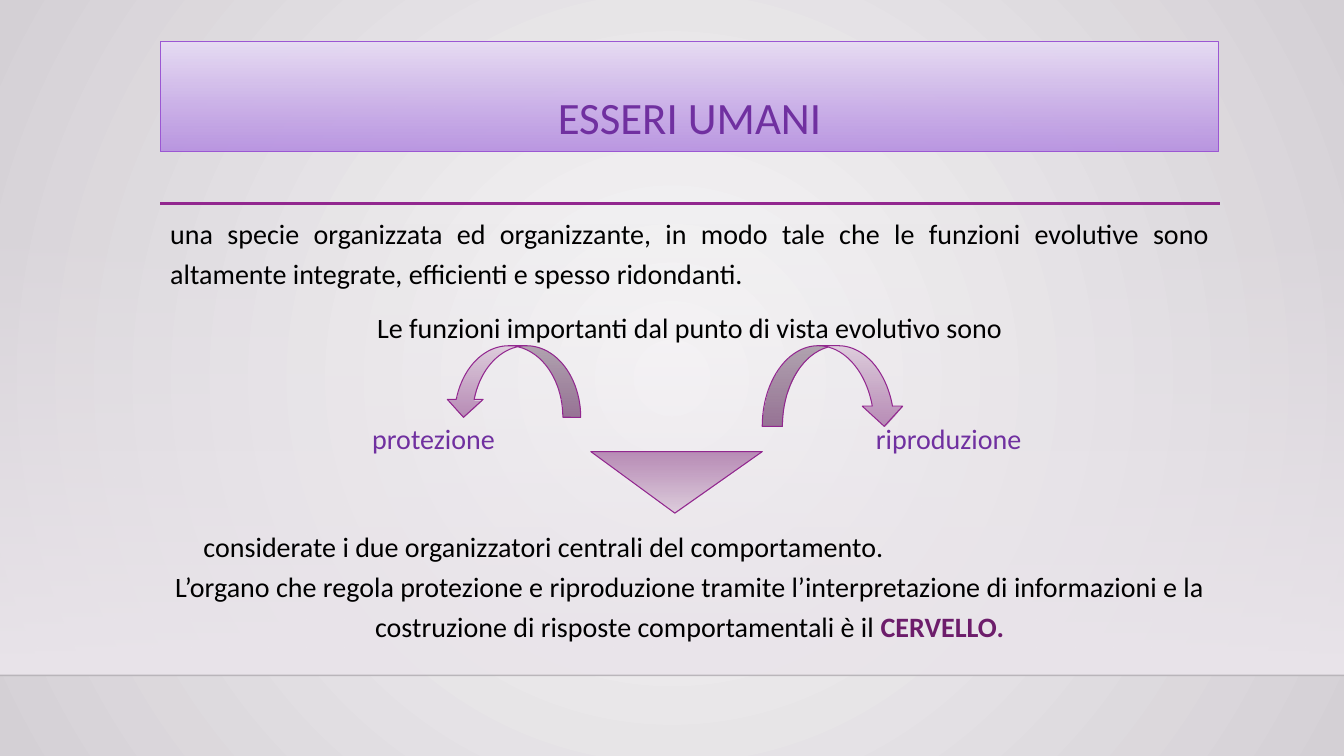
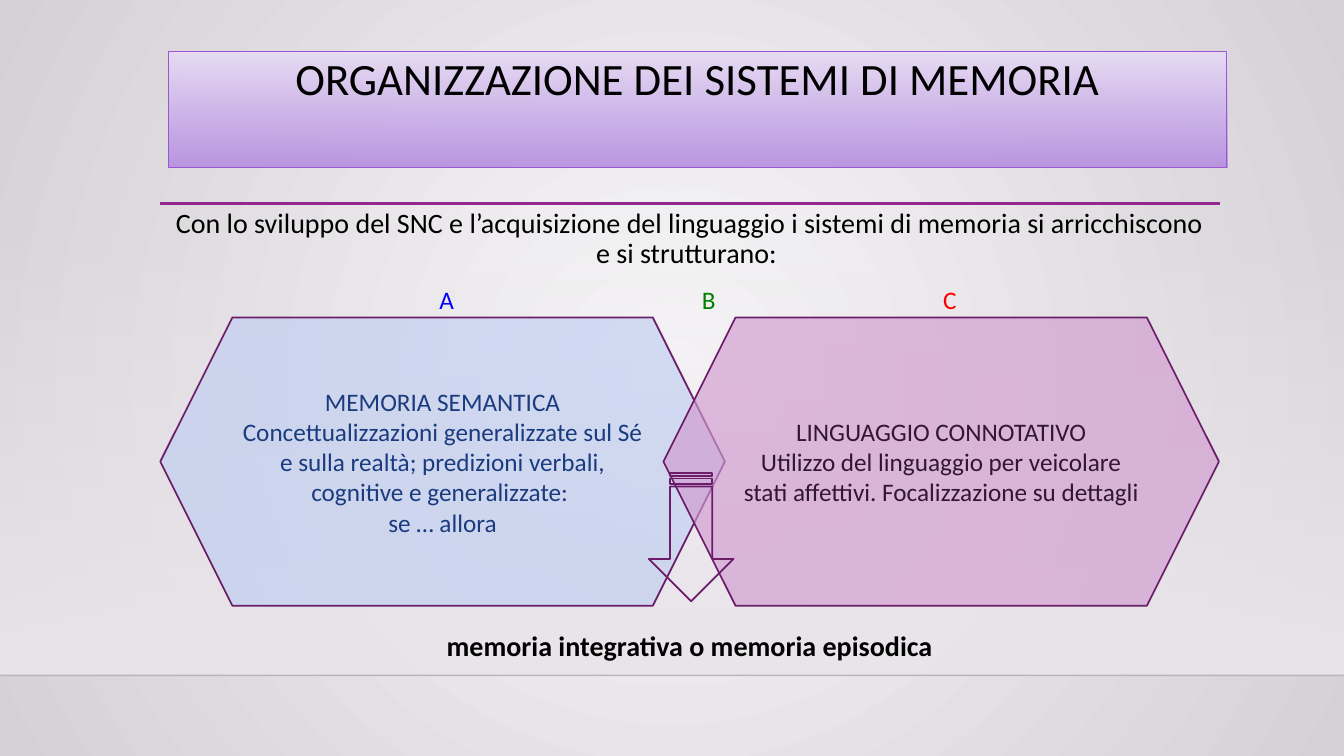
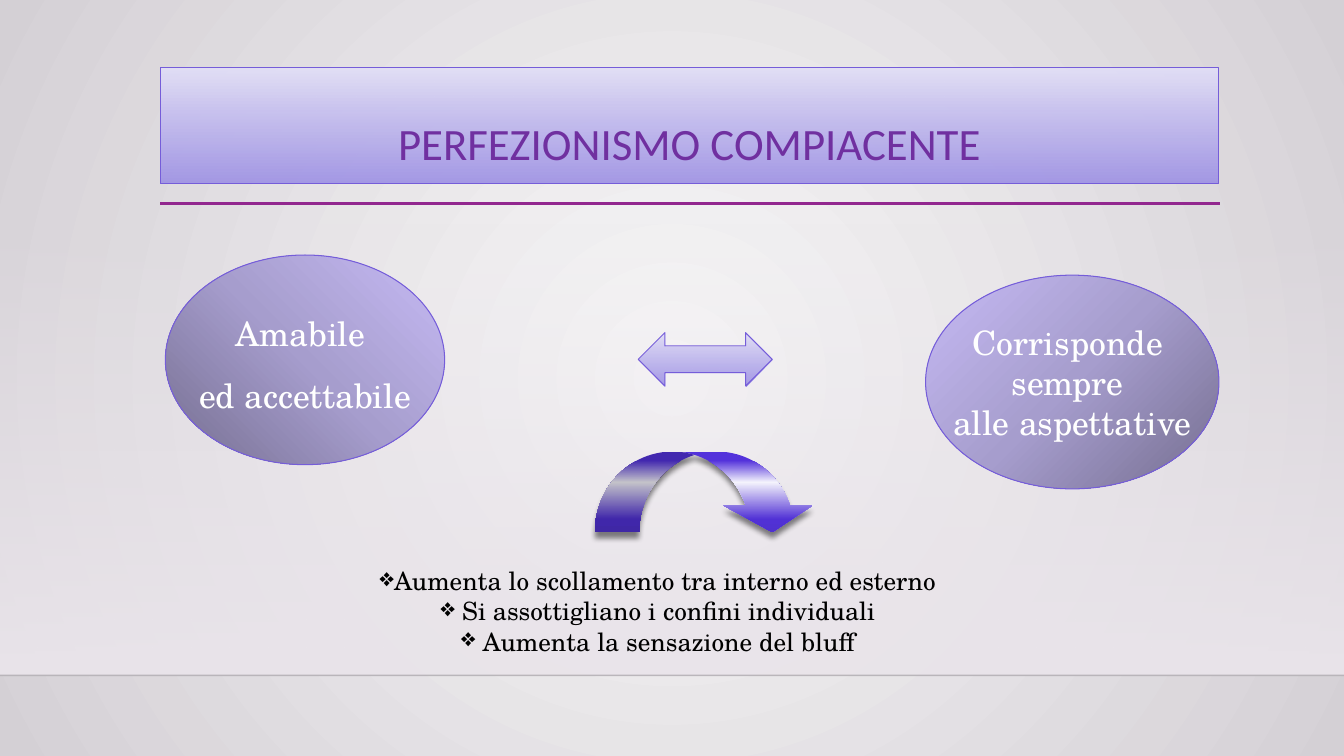
from dataclasses import dataclass
from typing import Any, Optional

import lxml.etree
import pptx
import pptx.dml.color
import pptx.enum.shapes
import pptx.enum.text
import pptx.oxml.ns
import pptx.util

Inches = pptx.util.Inches
Pt = pptx.util.Pt
qn = pptx.oxml.ns.qn
SHAPE = pptx.enum.shapes.MSO_SHAPE
ALIGN = pptx.enum.text.PP_ALIGN
ANCHOR = pptx.enum.text.MSO_ANCHOR

COLORS = {
    "bg_light": "F8F7F8", "bg_dark": "D4D0D5", "panel": "EAE5EB",
    "floor": "000001", "rule": "92278F", "black": "000000", "white": "FFFFFF",
    "violet": "7030A0", "plum": "6D1D6B", "outline": "6C1D6A",
    "lilac_light": "E7DCF4", "lilac": "B791E1", "lilac_line": "9B57D3",
    "iris_light": "E2DFF6", "iris": "9F93E5", "iris_line": "755DD9",
    "mauve_light": "DECEDD", "mauve": "B485B2",
    "ball_dark": "756E90", "ball_mid": "A69DCD", "ball_light": "C6BAF4",
    "indigo": "5332DB", "indigo_mid": "5131D5", "indigo_end": "4F31CF",
    "shine": "F4F3FC", "sky": "BDCDF1", "navy": "1B3B7F",
    "orchid": "D19BD0", "aubergine": "321731",
    "blue": "0000FF", "green": "008000", "red": "FF0000",
}
SANS = "Calibri"
SERIF = "TeX Gyre Schola"


@dataclass(frozen=True)
class Stop:
    pos: int
    color: str
    alpha: int = 100


@dataclass(frozen=True)
class Gradient:
    stops: tuple[Stop, ...]
    angle: int = 90
    focus: Optional[tuple[int, int, int, int]] = None


@dataclass(frozen=True)
class Solid:
    color: str
    alpha: int = 100


@dataclass(frozen=True)
class Box:
    x: float
    y: float
    w: float
    h: float


@dataclass(frozen=True)
class Run:
    text: str
    color: str = "black"
    bold: bool = False


@dataclass(frozen=True)
class Para:
    runs: tuple[Run, ...]
    align: Any = ALIGN.CENTER
    before: float = 0
    spacing: float = 1.0
    indent: float = 0
    bullet: str = ""


@dataclass(frozen=True)
class Style:
    size: int
    font: str = SANS
    anchor: Any = ANCHOR.TOP
    wrap: bool = True
    top: float = 0.05


@dataclass(frozen=True)
class Label:
    text: str
    center: float
    color: str


def two_tone(start: str, end: str) -> Gradient:
    return Gradient((Stop(0, start), Stop(100, end, 92)))


def ball(focus: tuple[int, int, int, int]) -> Gradient:
    return Gradient((Stop(0, "ball_dark"), Stop(50, "ball_mid"), Stop(100, "ball_light")), focus=focus)


BACKGROUND = Gradient((Stop(0, "bg_light"), Stop(100, "bg_dark")), focus=(50, 50, 50, 50))
PANEL = Gradient((Stop(0, "panel", 0), Stop(100, "panel")))
LILAC = two_tone("lilac_light", "lilac")
IRIS = two_tone("iris_light", "iris")
MAUVE = two_tone("mauve_light", "mauve")
GLOSS = Gradient((Stop(11, "indigo"), Stop(38, "shine"), Stop(84, "indigo_mid"), Stop(100, "indigo_end")))


def rgb(name: str) -> pptx.dml.color.RGBColor:
    return pptx.dml.color.RGBColor.from_string(COLORS[name])


def child(parent: Any, tag: str, **attrs: Any) -> Any:
    return lxml.etree.SubElement(parent, qn(tag), {k: str(v) for k, v in attrs.items()})


def set_alpha(clr: Any, alpha: int) -> None:
    if alpha < 100:
        child(clr, "a:alpha", val=alpha * 1000)


def set_gradient(fill: Any, root: Any, grad: Gradient) -> None:
    fill.gradient()
    el = next(root.iter(qn("a:gradFill")))
    for old in list(el):
        el.remove(old)
    el.set("rotWithShape", "1")
    stops = child(el, "a:gsLst")
    for stop in grad.stops:
        gs = child(stops, "a:gs", pos=stop.pos * 1000)
        set_alpha(child(gs, "a:srgbClr", val=COLORS[stop.color]), stop.alpha)
    if grad.focus:
        circle = child(el, "a:path", path="circle")
        sides = {k: v * 1000 for k, v in zip("ltrb", grad.focus)}
        child(circle, "a:fillToRect", **sides)
    else:
        child(el, "a:lin", ang=grad.angle * 60000, scaled=0)


def add_shape(slide: Any, kind: Any, box: Box, fill: Any = None, line: str = "", width: float = 0.75,
              rot: int = 0, adj: tuple[float, ...] = ()) -> Any:
    sp = slide.shapes.add_shape(kind, Inches(box.x), Inches(box.y), Inches(box.w), Inches(box.h))
    sp.shadow.inherit = False
    sp.rotation = rot
    for i, value in enumerate(adj):
        sp.adjustments[i] = value
    spPr = sp._element.spPr
    if isinstance(fill, Gradient):
        set_gradient(sp.fill, spPr, fill)
    elif fill:
        sp.fill.solid()
        sp.fill.fore_color.rgb = rgb(fill.color)
        set_alpha(spPr.find(qn("a:solidFill"))[0], fill.alpha)
    else:
        sp.fill.background()
    if line:
        sp.line.color.rgb = rgb(line)
        sp.line.width = Pt(width)
    else:
        sp.line.fill.background()
    return sp


def add_line(slide: Any, x1: float, x2: float, y: float, color: str, width: float, alpha: int = 100) -> None:
    ln = slide.shapes.add_connector(pptx.enum.shapes.MSO_CONNECTOR.STRAIGHT,
                                    Inches(x1), Inches(y), Inches(x2), Inches(y))
    ln.line.color.rgb = rgb(color)
    ln.line.width = Pt(width)
    spPr = ln._element.spPr
    set_alpha(next(spPr.iter(qn("a:srgbClr"))), alpha)
    child(spPr, "a:effectLst")


def write(sp: Any, style: Style, *paras: Para) -> None:
    tf = sp.text_frame
    tf.word_wrap = style.wrap
    tf.vertical_anchor = style.anchor
    tf.margin_top = Inches(style.top)
    for i, para in enumerate(paras):
        p = tf.paragraphs[0] if i == 0 else tf.add_paragraph()
        p.alignment = para.align
        p.line_spacing = para.spacing
        if para.before:
            p.space_before = Pt(para.before)
        pPr = p._p.get_or_add_pPr()
        pPr.set("marL", str(Inches(para.indent)))
        pPr.set("indent", "0")
        if para.bullet:
            child(pPr, "a:buChar", char=para.bullet)
        for run in para.runs:
            r = p.add_run()
            r.text = run.text
            r.font.name = style.font
            r.font.size = Pt(style.size)
            r.font.bold = run.bold
            r.font.color.rgb = rgb(run.color)


def add_text(slide: Any, box: Box, style: Style, *paras: Para) -> None:
    sp = slide.shapes.add_textbox(Inches(box.x), Inches(box.y), Inches(box.w), Inches(box.h))
    write(sp, style, *paras)


def add_labels(slide: Any, y: float, width: float, size: int, *labels: Label) -> None:
    for label in labels:
        add_text(slide, Box(label.center - width / 2, y, width, 0.4), Style(size),
                 Para((Run(label.text, label.color),)))


def add_base(prs: Any) -> Any:
    slide = prs.slides.add_slide(prs.slide_layouts[6])
    set_gradient(slide.background.fill, slide._element, BACKGROUND)
    add_shape(slide, SHAPE.RECTANGLE, Box(0, 2.21, 13.33, 4.49), PANEL)
    add_line(slide, 0, 13.33, 6.7, "floor", 1, 20)
    add_line(slide, 1.59, 12.1, 2.02, "rule", 2.5)
    return slide


def add_title(slide: Any, text: str, box: Box, fill: Gradient, line: str, color: str, top: float) -> None:
    sp = add_shape(slide, SHAPE.RECTANGLE, box, fill, line)
    write(sp, Style(32, top=top), Para((Run(text, color),), spacing=0.9))


def build_humans(prs: Any) -> None:
    slide = add_base(prs)
    add_title(slide, "ESSERI UMANI", Box(1.59, 0.41, 10.5, 1.09), LILAC, "lilac_line", "violet", 0.54)
    add_text(
        slide, Box(1.59, 2.03, 10.5, 4.5), Style(20),
        Para((Run("una specie organizzata ed organizzante, in modo tale che le funzioni evolutive sono "
                  "altamente integrate, efficienti e spesso ridondanti."),), ALIGN.JUSTIFY, spacing=1.2),
        Para((Run("Le funzioni importanti dal punto di vista evolutivo sono"),), before=10, spacing=1.2),
        Para((Run("considerate i due organizzatori centrali del comportamento."),), ALIGN.LEFT, 127, 1.2, 0.33),
        Para((Run("L’organo che regola protezione e riproduzione tramite l’interpretazione di informazioni "
                  "e la costruzione di risposte comportamentali è il "),
              Run("CERVELLO.", "plum", True)), spacing=1.2),
    )
    add_labels(slide, 4.13, 2, 20,
               Label("protezione", 4.3, "violet"), Label("riproduzione", 9.41, "violet"))
    add_shape(slide, SHAPE.CURVED_DOWN_ARROW, Box(7.56, 3.43, 1.41, 0.8), MAUVE, "rule")
    left = add_shape(slide, SHAPE.CURVED_DOWN_ARROW, Box(4.42, 3.43, 1.34, 0.71), MAUVE, "rule")
    left._element.spPr.find(qn("a:xfrm")).set("flipH", "1")
    add_shape(slide, SHAPE.ISOSCELES_TRIANGLE, Box(5.86, 4.48, 1.7, 0.61), MAUVE, "rule", rot=180, adj=(0.51,))


def build_memory(prs: Any) -> None:
    slide = add_base(prs)
    add_title(slide, "ORGANIZZAZIONE DEI SISTEMI DI MEMORIA", Box(1.67, 0.51, 10.5, 1.15),
              LILAC, "lilac_line", "black", 0.05)
    add_text(
        slide, Box(1.59, 2.03, 10.5, 4.73), Style(20),
        Para((Run("Con lo sviluppo del SNC e l’acquisizione del linguaggio i sistemi di memoria "
                  "si arricchiscono e si strutturano: "),), spacing=0.9),
        Para((Run("memoria integrativa o memoria episodica", bold=True),), before=259, spacing=0.9),
    )
    hexagons = (
        (Box(1.59, 3.15, 5.6, 2.86), Solid("sky", 62), "navy",
         ("MEMORIA SEMANTICA",
          "Concettualizzazioni generalizzate sul Sé e sulla realtà; predizioni verbali, "
          "cognitive e generalizzate: ",
          "se … allora")),
        (Box(6.58, 3.15, 5.51, 2.86), Solid("orchid", 65), "aubergine",
         ("LINGUAGGIO CONNOTATIVO",
          "Utilizzo del linguaggio per veicolare stati affettivi. Focalizzazione su dettagli")),
    )
    for box, fill, color, lines in hexagons:
        sp = add_shape(slide, SHAPE.HEXAGON, box, fill, "outline", 1.25)
        write(sp, Style(18, anchor=ANCHOR.MIDDLE), *(Para((Run(t, color),)) for t in lines))
    add_labels(slide, 2.77, 0.5, 18,
               Label("A", 4.43, "blue"), Label("B", 7.03, "green"), Label("C", 9.42, "red"))
    add_shape(slide, SHAPE.STRIPED_RIGHT_ARROW, Box(6.22, 4.91, 1.27, 0.84), None, "outline", 1.25, 90)


def build_perfectionism(prs: Any) -> None:
    slide = add_base(prs)
    add_title(slide, "PERFEZIONISMO COMPIACENTE", Box(1.59, 0.67, 10.5, 1.15), IRIS, "iris_line", "violet", 0.54)
    balls = (
        (Box(1.64, 2.53, 2.77, 2.08), (0, 100, 100, 0), 10, 1.2, ("Amabile ", "ed accettabile")),
        (Box(9.18, 2.73, 2.91, 2.12), (100, 100, 0, 0), 0, 1.0,
         ("Corrisponde ", "sempre ", "alle aspettative")),
    )
    for box, focus, gap, spacing, lines in balls:
        sp = add_shape(slide, SHAPE.OVAL, box, ball(focus), "iris_line")
        write(sp, Style(24, SERIF, ANCHOR.MIDDLE, False),
              *(Para((Run(t, "white"),), before=gap if i else 0, spacing=spacing)
                for i, t in enumerate(lines)))
    add_shape(slide, SHAPE.LEFT_RIGHT_ARROW, Box(6.33, 3.3, 1.33, 0.53), IRIS, "iris_line")
    arrow = add_shape(slide, SHAPE.CURVED_DOWN_ARROW, Box(5.9, 4.48, 2.2, 0.8), GLOSS, adj=(0.55, 1.1, 0.33))
    shadow = child(arrow._element.spPr.find(qn("a:effectLst")), "a:outerShdw",
                   blurRad=Pt(4), dist=Pt(4), dir=90 * 60000, rotWithShape=0)
    set_alpha(child(shadow, "a:srgbClr", val=COLORS["black"]), 48)
    effects = ("Aumenta lo scollamento tra interno ed esterno",
               " Si assottigliano i confini individuali",
               " Aumenta la sensazione del bluff")
    add_text(slide, Box(3.19, 5.56, 6.67, 1.01), Style(18, SERIF),
             *(Para((Run(t),), bullet="❖") for t in effects))


def main() -> None:
    prs = pptx.Presentation()
    prs.slide_width = Inches(13.33)
    prs.slide_height = Inches(7.5)
    build_humans(prs)
    build_memory(prs)
    build_perfectionism(prs)
    prs.save("out.pptx")


if __name__ == "__main__":
    main()
